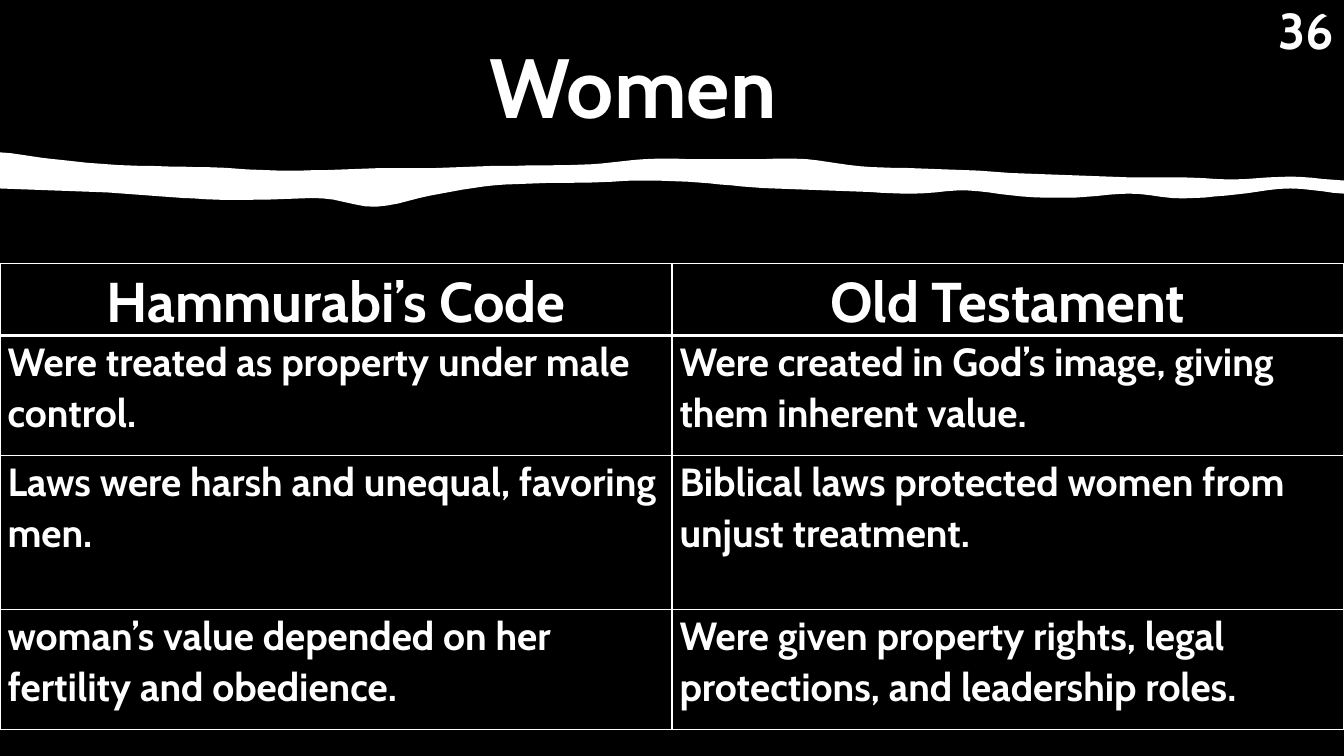
"""Slide comparing the treatment of women in Hammurabi's Code and the Old Testament."""
from lxml import etree
from pptx import Presentation
from pptx.dml.color import RGBColor
from pptx.enum.text import PP_ALIGN
from pptx.oxml.ns import qn
from pptx.util import Cm, Pt

CENTER, LEFT, RIGHT = PP_ALIGN.CENTER, PP_ALIGN.LEFT, PP_ALIGN.RIGHT
COLORS = {"background": "000000", "ink": "FFFFFF"}
INK = RGBColor.from_string(COLORS["ink"])
FONT = "Cabin"
SLIDE_WIDTH, SLIDE_HEIGHT = 33.87, 19.05
THIN, THICK = 1, 3


def write(p, text, size, align):
    p.alignment = align
    r = p.add_run()
    r.text = text
    r.font.name = FONT
    r.font.size = Pt(size)
    r.font.bold = True
    r.font.color.rgb = INK


def add_border(cell, side, width):
    ln = etree.SubElement(cell._tc.get_or_add_tcPr(), qn("a:" + side), w=str(Pt(width)))
    fill = etree.SubElement(ln, qn("a:solidFill"))
    etree.SubElement(fill, qn("a:srgbClr"), val=COLORS["ink"])


prs = Presentation()
prs.slide_width, prs.slide_height = Cm(SLIDE_WIDTH), Cm(SLIDE_HEIGHT)
s = prs.slides.add_slide(prs.slide_layouts[6])
s.background.fill.solid()
s.background.fill.fore_color.rgb = RGBColor.from_string(COLORS["background"])

UNITS_PER_CM = 100
POINTS_PER_STEP = 5
TEAR_EDGES = {
    "top": [384, 401, 414, 419, 422, 429, 429, 424, 424, 419, 417, 414, 401,
            401, 401, 401, 419, 424, 429, 437, 442, 447, 447, 452, 445, 455],
    "bottom": [475, 480, 485, 495, 503, 503, 500, 521, 493, 470, 462, 460, 455,
               460, 472, 478, 483, 488, 480, 495, 498, 488, 500, 490, 475, 488],
}
curves = {}
for edge, heights in TEAR_EDGES.items():
    steps = len(heights) - 1
    step_width = SLIDE_WIDTH * UNITS_PER_CM / steps
    padded = [heights[0], *heights, heights[-1]]
    curve = []
    for i in range(steps):
        before, start, end, after = padded[i:i + 4]
        slope_in, slope_out = (end - before) / 2, (after - start) / 2
        for k in range(POINTS_PER_STEP):
            t = k / POINTS_PER_STEP
            ease = t * t * (3 - 2 * t)
            y = start + (end - start) * ease
            y += t * (1 - t) * (slope_in * (1 - t) - slope_out * t)
            curve.append(((i + t) * step_width, y))
    curve.append((SLIDE_WIDTH * UNITS_PER_CM, heights[-1]))
    curves[edge] = curve

outline = curves["top"] + curves["bottom"][::-1]
builder = s.shapes.build_freeform(*outline[0], scale=Cm(1 / UNITS_PER_CM))
builder.add_line_segments(outline[1:], close=True)
sp = builder.convert_to_shape()
sp.shadow.inherit = False
sp.fill.solid()
sp.fill.fore_color.rgb = INK
sp.line.fill.background()

TEXT_BOXES = [
    ("Women", 60, CENTER, (7.62, 0.74, 16.66, 2.82), 1, 0),
    ("36", 36, RIGHT, (31.73, 0.03, 2.13, 1.9), 0.9, 18),
]
for text, size, align, box, spacing, after in TEXT_BOXES:
    tf = s.shapes.add_textbox(*map(Cm, box)).text_frame
    tf.word_wrap = True
    p = tf.paragraphs[0]
    p.line_spacing = spacing
    p.space_after = Pt(after)
    write(p, text, size, align)

ROWS = [
    (1.63, "Hammurabi’s Code", "Old Testament"),
    (3.02, "Were treated as property under male control.",
     "Were created in God’s image, giving them inherent value."),
    (3.89, "Laws were harsh and unequal, favoring men.",
     "Biblical laws protected women from unjust treatment."),
    (3.02, "woman’s value depended on her fertility and obedience.",
     "Were given property rights, legal protections, and leadership roles."),
]
table_height = sum(row[0] for row in ROWS)
table = s.shapes.add_table(len(ROWS), 2, 0, Cm(6.64), Cm(SLIDE_WIDTH), Cm(table_height)).table
table.first_row = table.horz_banding = False
for i, (height, *texts) in enumerate(ROWS):
    table.rows[i].height = Cm(height)
    size, align = (40, CENTER) if i == 0 else (28, LEFT)
    borders = {
        "lnL": THIN,
        "lnR": THIN,
        "lnT": THICK if i == 1 else THIN,
        "lnB": THICK if i == 0 else THIN,
    }
    for j, text in enumerate(texts):
        cell = table.cell(i, j)
        cell.margin_left = cell.margin_right = Cm(0.19)
        cell.margin_top = cell.margin_bottom = 0
        for side, width in borders.items():
            add_border(cell, side, width)
        cell.fill.background()
        p = cell.text_frame.paragraphs[0]
        p.line_spacing = 1.07
        p.space_after = Pt(8)
        write(p, text, size, align)

prs.save("out.pptx")
